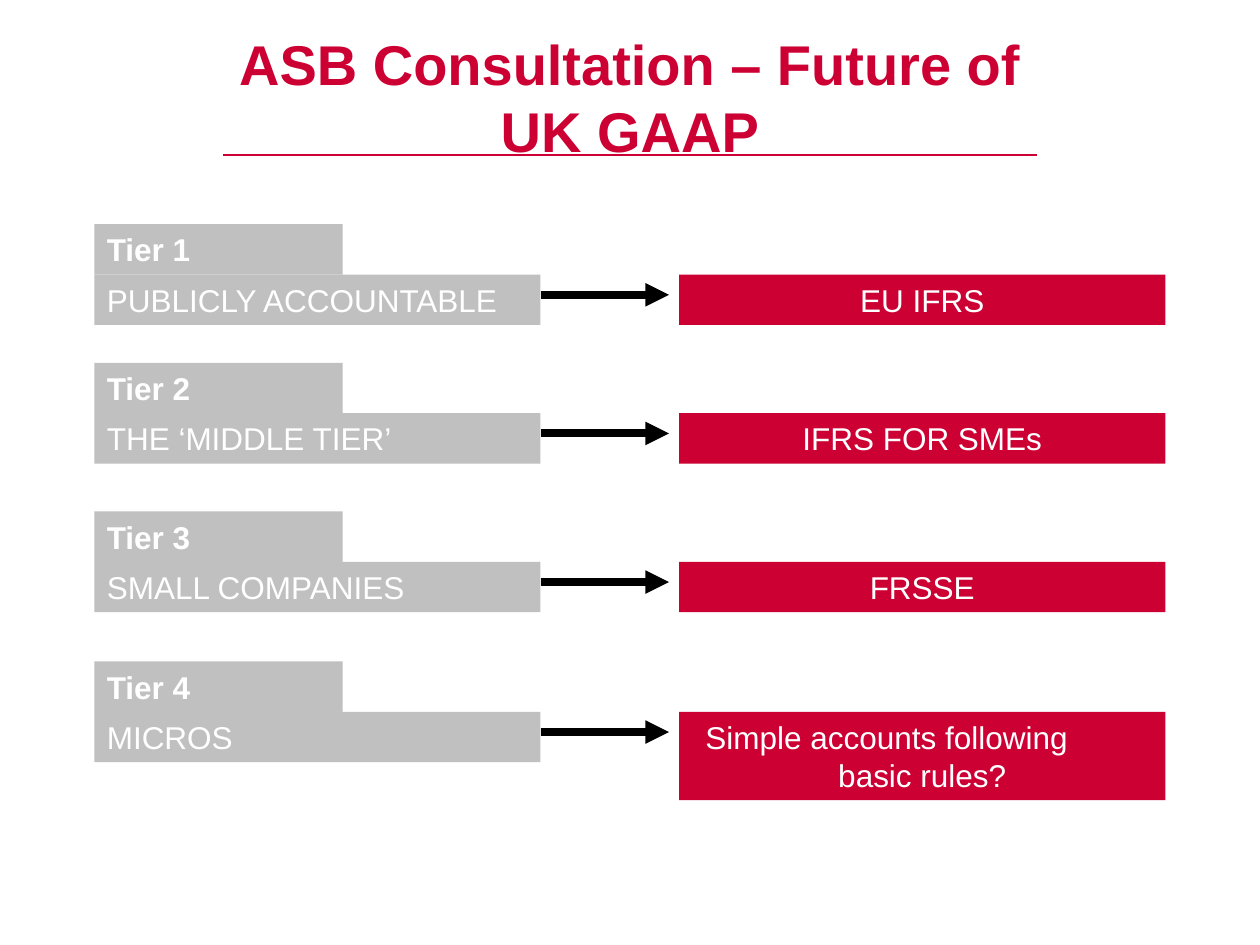
from lxml.etree import SubElement
from pptx import Presentation
from pptx.dml.color import RGBColor
from pptx.enum.shapes import MSO_CONNECTOR, MSO_SHAPE
from pptx.enum.text import MSO_ANCHOR, MSO_AUTO_SIZE, PP_ALIGN
from pptx.oxml.ns import qn
from pptx.util import Inches, Pt

RED = RGBColor(0xCC, 0x00, 0x33)
GREY = RGBColor(0xC0, 0xC0, 0xC0)
WHITE = RGBColor(0xFF, 0xFF, 0xFF)
BLACK = RGBColor(0x00, 0x00, 0x00)

LEFT = 0.75
ROW_H = 0.4
TIER_W, GROUP_W = 1.97, 3.54
ARROW_X1, ARROW_X2, ARROW_DY = LEFT + GROUP_W, 5.31, 0.16
RULE_X, RULE_W = 5.39, 3.86

TIERS = [
    (1.78, "PUBLICLY ACCOUNTABLE", ["EU IFRS"]),
    (2.88, "THE ‘MIDDLE TIER’", ["IFRS FOR SMEs"]),
    (4.06, "SMALL COMPANIES", ["FRSSE"]),
    (5.25, "MICROS", ["Simple accounts following", "basic rules?"]),
]


class SlideBuilder:
    """Draw the elements of one slide in a shared style."""

    def __init__(self, slide, font="Arial", size=18):
        self.s = slide
        self.font = font
        self.size = size

    def style(self, p, size, color, bold, align):
        p.alignment = align
        p.font.name = self.font
        p.font.size = Pt(size)
        p.font.bold = bold
        p.font.color.rgb = color

    def title(self, x, y, w, h, text):
        sp = self.s.shapes.title
        sp.left, sp.top, sp.width, sp.height = map(Inches, (x, y, w, h))
        tf = sp.text_frame
        tf.text = text
        tf.word_wrap = True
        tf.auto_size = MSO_AUTO_SIZE.NONE
        tf.vertical_anchor = MSO_ANCHOR.MIDDLE
        self.style(tf.paragraphs[0], 32, RED, True, PP_ALIGN.CENTER)

    def box(self, x, y, w, h, lines, fill, bold=False, align=PP_ALIGN.LEFT):
        sp = self.s.shapes.add_shape(
            MSO_SHAPE.RECTANGLE, Inches(x), Inches(y), Inches(w), Inches(h))
        sp.shadow.inherit = False
        sp.fill.solid()
        sp.fill.fore_color.rgb = fill
        sp.line.fill.background()
        tf = sp.text_frame
        tf.text = "\n".join(lines)
        tf.word_wrap = True
        tf.auto_size = MSO_AUTO_SIZE.SHAPE_TO_FIT_TEXT
        tf.vertical_anchor = MSO_ANCHOR.TOP
        for p in tf.paragraphs:
            self.style(p, self.size, WHITE, bold, align)
        return sp

    def indent_line(self, p, indent):
        p.alignment = PP_ALIGN.LEFT
        p._p.get_or_add_pPr().set("marL", str(Inches(indent)))

    def line(self, x1, x2, y, color, width, arrow=False):
        cxn = self.s.shapes.add_connector(
            MSO_CONNECTOR.STRAIGHT, Inches(x1), Inches(y), Inches(x2), Inches(y))
        cxn.line.color.rgb = color
        cxn.line.width = Pt(width)
        if arrow:
            SubElement(cxn.line._get_or_add_ln(), qn("a:tailEnd"), type="triangle")
        SubElement(cxn._element.spPr, qn("a:effectLst"))


def main():
    prs = Presentation()
    prs.slide_width, prs.slide_height = Inches(10), Inches(7.5)
    b = SlideBuilder(prs.slides.add_slide(prs.slide_layouts[5]))

    b.line(1.77, 8.23, 1.23, RED, 1.5)
    b.title(1.77, 0.3, 6.46, 0.93, "ASB Consultation – Future of UK GAAP")

    for number, (top, group, rules) in enumerate(TIERS, 1):
        y = top + ROW_H
        b.box(LEFT, top, TIER_W, ROW_H, [f"Tier {number}"], GREY, bold=True)
        b.box(LEFT, y, GROUP_W, ROW_H, [group], GREY)
        b.line(ARROW_X1, ARROW_X2, y + ARROW_DY, BLACK, 4.5, arrow=True)
        height = ROW_H + 0.3 * (len(rules) - 1)
        sp = b.box(RULE_X, y, RULE_W, height, rules, RED, align=PP_ALIGN.CENTER)
        if len(rules) > 1:
            b.indent_line(sp.text_frame.paragraphs[0], 0.11)

    prs.save("out.pptx")


if __name__ == "__main__":
    main()
